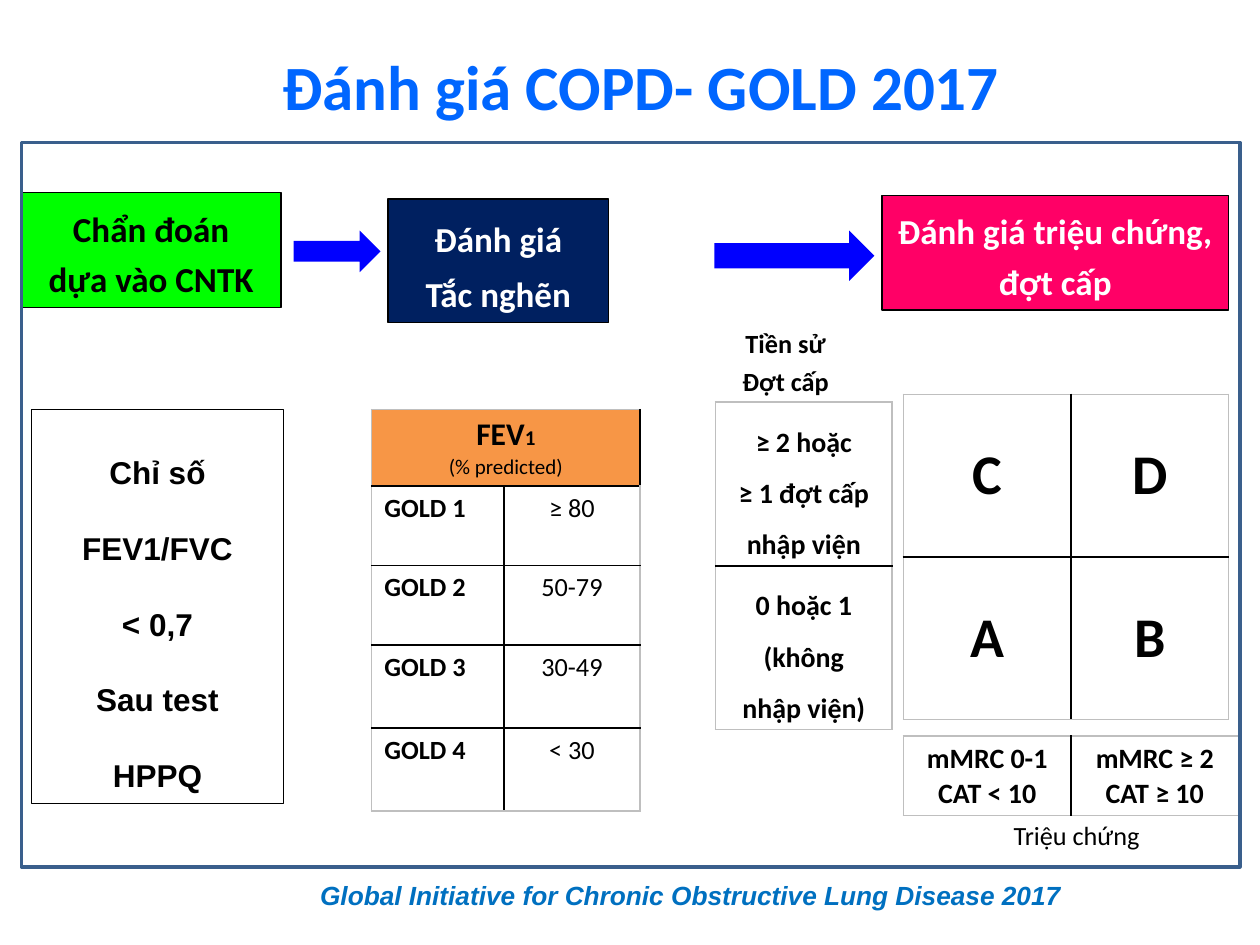
from dataclasses import dataclass

from lxml import etree
from pptx import Presentation
from pptx.dml.color import RGBColor
from pptx.enum.shapes import MSO_SHAPE
from pptx.enum.text import MSO_ANCHOR, PP_ALIGN
from pptx.oxml.ns import qn
from pptx.util import Inches, Pt

LEFT, CENTER, RIGHT = PP_ALIGN.LEFT, PP_ALIGN.CENTER, PP_ALIGN.RIGHT
TOP, MIDDLE = MSO_ANCHOR.TOP, MSO_ANCHOR.MIDDLE
RECTANGLE, ARROW = MSO_SHAPE.RECTANGLE, MSO_SHAPE.RIGHT_ARROW


@dataclass(frozen=True)
class Theme:
    font: str = "Calibri"
    alt_font: str = "Arial"
    black: str = "000000"
    white: str = "FFFFFF"
    title: str = "0066FF"
    source: str = "0070C0"
    frame: str = "3A5F8C"
    arrow: str = "0000FF"
    diagnosis: str = "00FF00"
    obstruction: str = "002060"
    symptoms: str = "FF0066"
    header: str = "F79646"
    outer_border: str = "BFBFBF"
    title_size: int = 36
    group_size: int = 32
    step_size: int = 20
    index_size: int = 18
    cell_size: int = 16
    label_size: int = 15
    small_size: int = 12


THEME = Theme()


def rgb(value):
    return RGBColor.from_string(value)


def inches(box):
    return [Inches(length) for length in box]


def write(frame, lines, size, color=THEME.black, font=THEME.font, bold=True,
          italic=False, align=CENTER, spacing=None):
    frame.text = "\n".join(lines)
    for paragraph in frame.paragraphs:
        paragraph.alignment = align
        if spacing:
            paragraph.line_spacing = spacing
        for run in paragraph.runs:
            run.font.name = font
            run.font.size = Pt(size)
            run.font.bold = bold
            run.font.italic = italic
            run.font.color.rgb = rgb(color)


def add_panel(slide, box, kind=RECTANGLE, fill=None, line=None, width=0.75):
    panel = slide.shapes.add_shape(kind, *inches(box))
    panel.shadow.inherit = False
    if fill:
        panel.fill.solid()
        panel.fill.fore_color.rgb = rgb(fill)
    else:
        panel.fill.background()
    if line:
        panel.line.color.rgb = rgb(line)
        panel.line.width = Pt(width)
    else:
        panel.line.fill.background()
    return panel


def add_box(slide, box, lines, size, fill=None, **style):
    panel = add_panel(slide, box, fill=fill, line=THEME.black)
    panel.text_frame.vertical_anchor = TOP
    panel.text_frame.word_wrap = True
    write(panel.text_frame, lines, size, **style)


def add_label(slide, box, lines, size, **style):
    label = slide.shapes.add_textbox(*inches(box))
    label.text_frame.word_wrap = True
    write(label.text_frame, lines, size, **style)


def set_border(cell, side, color):
    border = etree.SubElement(cell._tc.get_or_add_tcPr(), qn(f"a:{side}"), w=str(Pt(1)))
    fill = etree.SubElement(border, qn("a:solidFill"))
    etree.SubElement(fill, qn("a:srgbClr"), val=color)


def add_grid(slide, left, top, widths, heights):
    """Add an unfilled table with black inner rules and a pale outline."""
    box = inches((left, top, sum(widths), sum(heights)))
    table = slide.shapes.add_table(len(heights), len(widths), *box).table
    table.first_row = table.horz_banding = False
    for column, width in zip(table.columns, widths):
        column.width = Inches(width)
    for row, height in zip(table.rows, heights):
        row.height = Inches(height)
    last_row, last_column = len(heights) - 1, len(widths) - 1
    for r in range(len(heights)):
        for c in range(len(widths)):
            cell = table.cell(r, c)
            edges = {"lnL": c == 0, "lnR": c == last_column,
                     "lnT": r == 0, "lnB": r == last_row}
            for side, is_outer in edges.items():
                set_border(cell, side, THEME.outer_border if is_outer else THEME.black)
            cell.fill.background()
    return table


def add_title(slide, box):
    title = slide.shapes.title
    title.left, title.top, title.width, title.height = inches(box)
    title.text_frame.vertical_anchor = TOP
    write(title.text_frame, ["Đánh giá COPD- GOLD 2017"], THEME.title_size, THEME.title)


def add_steps(slide, left, top):
    """Add the row of three coloured steps and the arrows between them."""
    add_box(slide, (left, top, 2.06, 0.91), ["Chẩn đoán", "dựa vào CNTK"],
            THEME.step_size, THEME.diagnosis, spacing=1.2)
    add_box(slide, (left + 2.91, top + 0.05, 1.75, 0.98), ["Đánh giá", "Tắc nghẽn"],
            THEME.step_size, THEME.obstruction, color=THEME.white, spacing=1.3)
    add_box(slide, (left + 6.83, top + 0.02, 2.75, 0.91),
            ["Đánh giá triệu chứng, đợt cấp"],
            THEME.step_size, THEME.symptoms, color=THEME.white, spacing=1.2)
    for offset, width, height in ((2.16, 0.69, 0.33), (5.5, 1.27, 0.4)):
        add_panel(slide, (left + offset, top + 0.3, width, height), ARROW, THEME.arrow)


def add_fev_table(slide, left, top):
    grades = [("GOLD 1", "≥ 80"), ("GOLD 2", "50-79"),
              ("GOLD 3", "30-49"), ("GOLD 4", "< 30")]
    table = add_grid(slide, left, top, [1.05, 1.08], [0.6, 0.63, 0.63, 0.66, 0.66])
    header = table.cell(0, 0)
    header.merge(table.cell(0, 1))
    header.fill.solid()
    header.fill.fore_color.rgb = rgb(THEME.header)
    write(header.text_frame, ["FEV", "(% predicted)"], THEME.small_size, bold=False)
    name = header.text_frame.paragraphs[0]
    index = name.add_run()
    index.text = "1"
    for run, size in zip(name.runs, (THEME.index_size, THEME.small_size)):
        run.font.name = THEME.font
        run.font.size = Pt(size)
        run.font.bold = True
        run.font.color.rgb = rgb(THEME.black)
    for row, (grade, predicted) in enumerate(grades, 1):
        write(table.cell(row, 0).text_frame, [grade], THEME.label_size, align=LEFT)
        write(table.cell(row, 1).text_frame, [predicted], THEME.label_size, bold=False)


def add_history(slide, left, top):
    """Add the exacerbation history heading and its two levels."""
    add_label(slide, (left - 0.53, top - 0.69, 2.17, 0.71), ["Tiền sử", "Đợt cấp"],
              THEME.label_size, spacing=1.2)
    levels = [["≥ 2 hoặc", "≥ 1 đợt cấp", "nhập viện"],
              ["0 hoặc 1", "(không", "nhập viện)"]]
    table = add_grid(slide, left, top, [1.4], [1.3, 1.3])
    table.cell(0, 0).vertical_anchor = MIDDLE
    for row, lines in enumerate(levels):
        write(table.cell(row, 0).text_frame, lines, THEME.cell_size, spacing=1.5)


def add_groups(slide, left, top):
    """Add the ABCD groups with the symptom scale below them."""
    groups = add_grid(slide, left, top, [1.33, 1.25], [1.29, 1.29])
    for row, letters in enumerate(("CD", "AB")):
        for column, letter in enumerate(letters):
            cell = groups.cell(row, column)
            cell.vertical_anchor = MIDDLE
            write(cell.text_frame, [letter], THEME.group_size)
    scale = add_grid(slide, left, top + 2.71, [1.33, 1.33], [0.63])
    for column, lines in enumerate((["mMRC 0-1", "CAT < 10"], ["mMRC ≥ 2", "CAT ≥ 10"])):
        write(scale.cell(0, column).text_frame, lines, THEME.cell_size)
    add_label(slide, (left + 0.29, top + 3.32, 2.17, 0.35), ["Triệu chứng"],
              THEME.label_size, bold=False)


def main():
    deck = Presentation()
    deck.slide_width, deck.slide_height = Inches(10), Inches(7.5)
    slide = deck.slides.add_slide(deck.slide_layouts[5])
    add_title(slide, (1.17, 0.33, 7.83, 0.71))
    add_fev_table(slide, 2.95, 3.25)
    add_box(slide, (0.25, 3.25, 2, 3.13),
            ["Chỉ số", "FEV1/FVC", "< 0,7", "Sau test", "HPPQ"],
            THEME.index_size, font=THEME.alt_font, spacing=2.0)
    add_history(slide, 5.68, 3.19)
    add_groups(slide, 7.17, 3.13)
    add_label(slide, (0.79, 6.93, 7.73, 0.35),
              ["Global Initiative for Chronic Obstructive Lung Disease 2017"],
              THEME.label_size, color=THEME.source, font=THEME.alt_font,
              italic=True, align=RIGHT)
    add_steps(slide, 0.17, 1.53)
    add_panel(slide, (0.17, 1.13, 9.67, 5.75), line=THEME.frame, width=2)
    deck.save("out.pptx")


if __name__ == "__main__":
    main()
